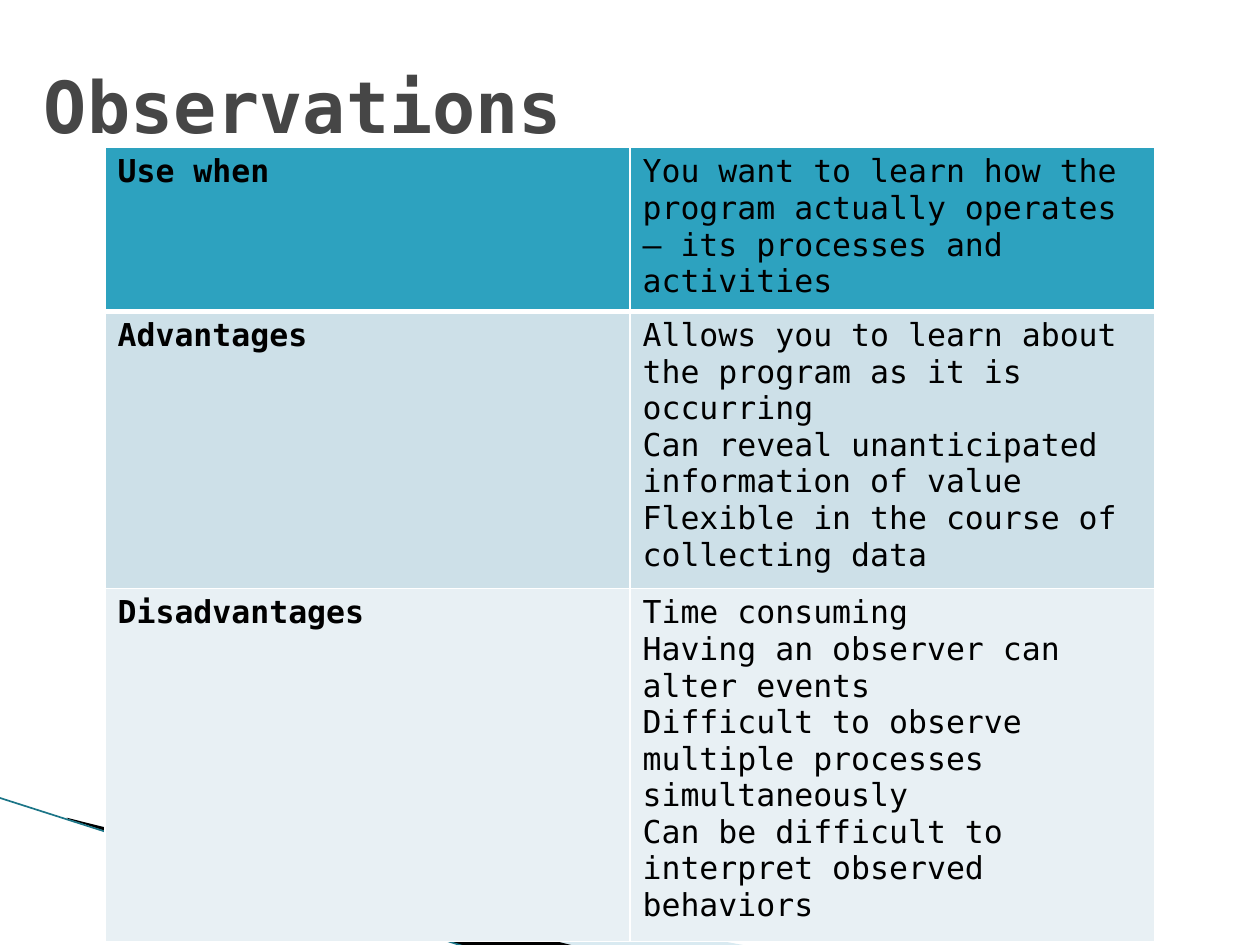
from lxml import etree
from pptx import Presentation
from pptx.dml.color import RGBColor
from pptx.enum.shapes import MSO_CONNECTOR
from pptx.enum.text import MSO_ANCHOR
from pptx.oxml.ns import qn
from pptx.util import Inches, Pt

STRAIGHT = MSO_CONNECTOR.STRAIGHT
MIDDLE = MSO_ANCHOR.MIDDLE
FONT = "DejaVu Sans Mono"
WIDTH, HEIGHT = Inches(10), Inches(7.5)
COLUMN = WIDTH / 12
COLORS = {
    "title": "464646",
    "text": "000000",
    "header": "2DA2BF",
    "band_dark": "CDE0E8",
    "band_light": "E8F0F4",
    "border": "FFFFFF",
    "wedge_pale": "A0CBDC",
    "wedge_black": "000000",
    "edge": "1B7587",
}
PALE_WEDGE = [(0.55, 6.51), (5.95, 7.51), (4.56, 7.51), (0.55, 6.5)]
BLACK_WEDGE = [(0.53, 6.49), (4.57, 7.51), (3.72, 7.52), (0.54, 6.5)]
ROWS = [
    ("Use when", ["You want to learn how the program actually operates – its processes and activities"],
     "header", 1.08),
    ("Advantages", ["Allows you to learn about the program as it is occurring",
                    "Can reveal unanticipated information of value",
                    "Flexible in the course of collecting data"],
     "band_dark", 2.05),
    ("Disadvantages", ["Time consuming",
                       "Having an observer can alter events",
                       "Difficult to observe multiple processes simultaneously",
                       "Can be difficult to interpret observed behaviors"],
     "band_light", 2.05),
]


def rgb(name):
    return RGBColor.from_string(COLORS[name])


def style_paragraph(paragraph, size, color, bold):
    font = paragraph.font
    font.name = FONT
    font.size = Pt(size)
    font.bold = bold
    font.color.rgb = rgb(color)


def add_wedge(slide, points, color, opacity=100):
    corners = [(Inches(x), Inches(y)) for x, y in points]
    builder = slide.shapes.build_freeform(*corners[0], scale=1.0)
    builder.add_line_segments(corners[1:], close=True)
    wedge = builder.convert_to_shape()
    wedge.shadow.inherit = False
    wedge.line.fill.background()
    wedge.fill.solid()
    wedge.fill.fore_color.rgb = rgb(color)
    if opacity < 100:
        tint = wedge.fill._xPr.find(".//" + qn("a:srgbClr"))
        etree.SubElement(tint, qn("a:alpha"), val=str(opacity * 1000))


def add_edge(slide, start, end):
    edge = slide.shapes.add_connector(STRAIGHT, *map(Inches, start + end))
    edge.line.color.rgb = rgb("edge")
    edge.line.width = Pt(0.95)
    etree.SubElement(edge._element.spPr, qn("a:effectLst"))


def add_title(slide, title):
    box = slide.shapes.add_textbox(Inches(0.25), Inches(0.17), Inches(7.62), Inches(1.32))
    frame = box.text_frame
    frame.word_wrap = True
    frame.vertical_anchor = MIDDLE
    frame.text = title
    style_paragraph(frame.paragraphs[0], 41, "title", True)


def set_borders(cell, top, bottom):
    properties = cell._tc.get_or_add_tcPr()
    sides = {"lnL": 1, "lnR": 1, "lnT": top, "lnB": bottom}
    for position, (side, points) in enumerate(sides.items()):
        border = etree.Element(qn("a:" + side), w=str(Pt(points)))
        fill = etree.SubElement(border, qn("a:solidFill"))
        etree.SubElement(fill, qn("a:srgbClr"), val=COLORS["border"])
        properties.insert(position, border)


def fill_cell(cell, lines, color, bold):
    cell.fill.solid()
    cell.fill.fore_color.rgb = rgb(color)
    cell.text = "\n".join(lines)
    for paragraph in cell.text_frame.paragraphs:
        style_paragraph(paragraph, 18, "text", bold)


def add_observation_table(slide):
    total = Inches(sum(height for *_, height in ROWS))
    table = slide.shapes.add_table(
        len(ROWS), 2, int(COLUMN), Inches(1.17), int(10 * COLUMN), total).table
    for column in table.columns:
        column.width = int(5 * COLUMN)
    for index, (heading, points, color, height) in enumerate(ROWS):
        table.rows[index].height = Inches(height)
        heading_cell, points_cell = table.rows[index].cells
        fill_cell(heading_cell, [heading], color, True)
        fill_cell(points_cell, points, color, False)
        for cell in (heading_cell, points_cell):
            set_borders(cell, top=3 if index == 1 else 1, bottom=3 if index == 0 else 1)


def main():
    presentation = Presentation()
    presentation.slide_width, presentation.slide_height = WIDTH, HEIGHT
    slide = presentation.slides.add_slide(presentation.slide_layouts[6])
    add_wedge(slide, PALE_WEDGE, "wedge_pale", opacity=40)
    add_wedge(slide, BLACK_WEDGE, "wedge_black")
    add_edge(slide, (-0.01, 6.33), (3.71, 7.52))
    add_title(slide, "Observations")
    add_observation_table(slide)
    presentation.save("out.pptx")


if __name__ == "__main__":
    main()
